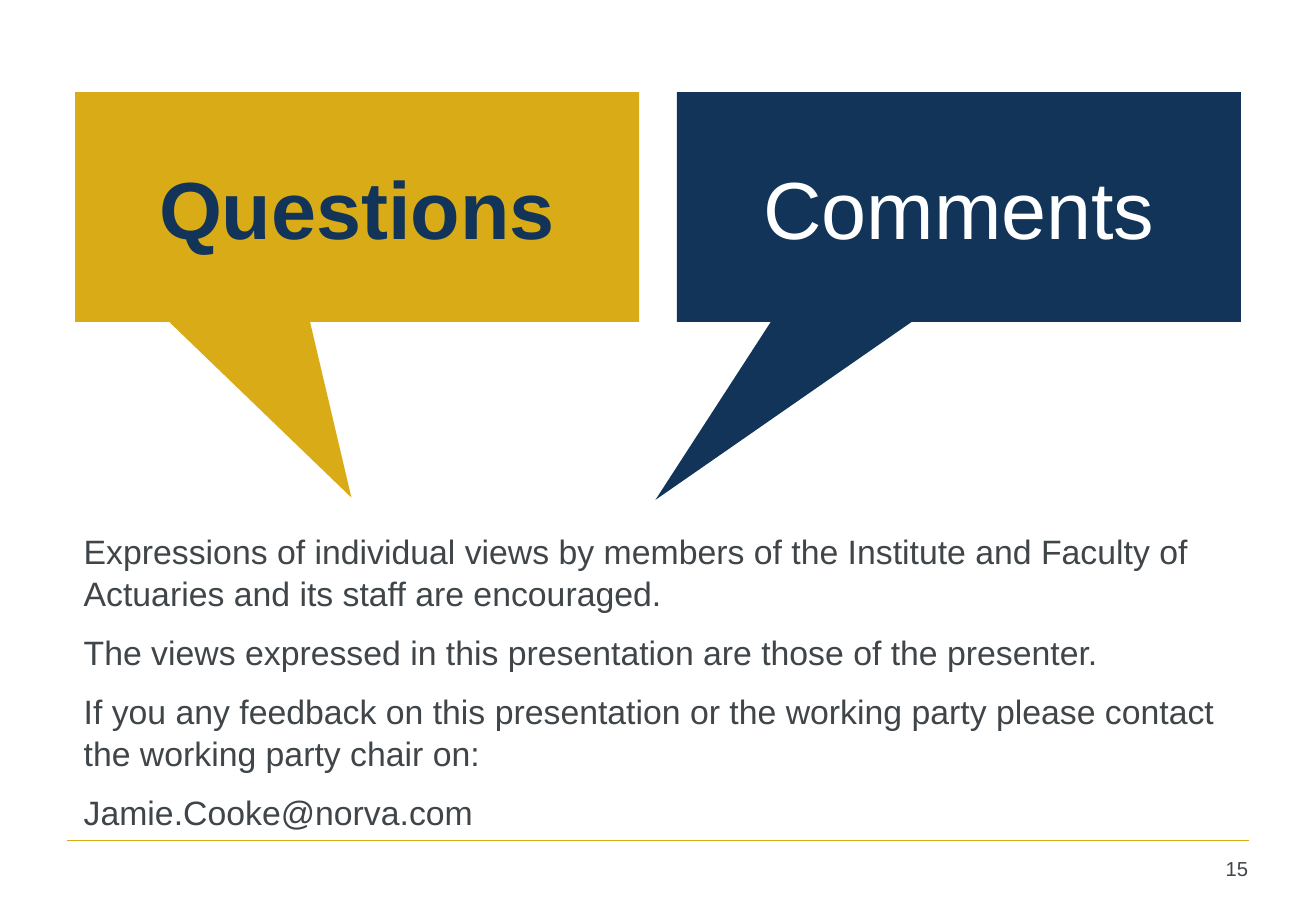
from dataclasses import dataclass

from lxml.etree import SubElement
from pptx import Presentation
from pptx.dml.color import RGBColor
from pptx.enum.shapes import MSO_CONNECTOR as Connector, MSO_SHAPE as Shape
from pptx.enum.text import MSO_ANCHOR as Anchor, PP_ALIGN as Align
from pptx.oxml.ns import qn
from pptx.util import Cm, Pt

GOLD = "D9AB16"
NAVY = "113458"
WHITE = "FFFFFF"
GREY = "3F4548"

BUBBLE_TOP, BUBBLE_WIDTH, BUBBLE_HEIGHT = 1.93, 11.79, 4.8
LABEL_INSET_X, LABEL_INSET_Y = 0.6, 0.81


@dataclass
class Bubble:
    text: str
    left: float
    fill: str
    color: str
    bold: bool
    tip: tuple[float, float]


BUBBLES = [
    Bubble("Questions", 1.57, GOLD, NAVY, True, (-0.01, 1.266)),
    Bubble("Comments", 14.15, NAVY, WHITE, False, (-0.538, 1.276)),
]

CLOSING_LINES = [
    "Expressions of individual views by members of the Institute and Faculty of "
    "Actuaries and its staff are encouraged.",
    "The views expressed in this presentation are those of the presenter.",
    "If you any feedback on this presentation or the working party please contact "
    "the working party chair on:",
    "Jamie.Cooke@norva.com",
]


def paint(target, color: str) -> None:
    target.rgb = RGBColor.from_string(color)


def add_text(page, lines: list[str], left: float, top: float, width: float, height: float, *,
             size: float, color: str = GREY, bold: bool = False, align=Align.LEFT,
             anchor=Anchor.TOP, gap: float = 0, line_spacing: float = 1.0) -> None:
    box = page.shapes.add_textbox(Cm(left), Cm(top), Cm(width), Cm(height))
    frame = box.text_frame
    frame.word_wrap = True
    frame.vertical_anchor = anchor
    for index, line in enumerate(lines):
        para = frame.add_paragraph() if index else frame.paragraphs[0]
        para.alignment = align
        para.line_spacing = line_spacing
        para.space_before = Pt(gap if index else 0)
        span = para.add_run()
        span.text = line
        span.font.name = "Arial"
        span.font.size = Pt(size)
        span.font.bold = bold
        paint(span.font.color, color)


def add_bubble(page, bubble: Bubble) -> None:
    callout = page.shapes.add_shape(
        Shape.RECTANGULAR_CALLOUT, Cm(bubble.left), Cm(BUBBLE_TOP),
        Cm(BUBBLE_WIDTH), Cm(BUBBLE_HEIGHT))
    callout.shadow.inherit = False
    callout.adjustments[0], callout.adjustments[1] = bubble.tip
    callout.fill.solid()
    paint(callout.fill.fore_color, bubble.fill)
    callout.line.fill.background()
    add_text(page, [bubble.text], bubble.left + LABEL_INSET_X, BUBBLE_TOP + LABEL_INSET_Y,
             BUBBLE_WIDTH - 2 * LABEL_INSET_X, BUBBLE_HEIGHT - 2 * LABEL_INSET_Y,
             size=48, color=bubble.color, bold=bubble.bold,
             align=Align.CENTER, anchor=Anchor.MIDDLE)


def add_footer(page, number: str) -> None:
    rule = page.shapes.add_connector(
        Connector.STRAIGHT, Cm(1.4), Cm(17.58), Cm(26.11), Cm(17.58))
    paint(rule.line.color, GOLD)
    rule.line.width = Pt(1)
    SubElement(rule._element.spPr, qn("a:effectLst"))
    add_text(page, [number], 24.38, 17.78, 1.96, 0.94, size=12, align=Align.RIGHT)


def main() -> None:
    deck = Presentation()
    deck.slide_width, deck.slide_height = Cm(27.51), Cm(19.05)
    page = deck.slides.add_slide(deck.slide_layouts[6])
    add_footer(page, "15")
    add_text(page, CLOSING_LINES, 1.5, 10.94, 25.27, 6.55,
             size=20, gap=10, line_spacing=1.04)
    for bubble in BUBBLES:
        add_bubble(page, bubble)
    deck.save("out.pptx")


if __name__ == "__main__":
    main()
